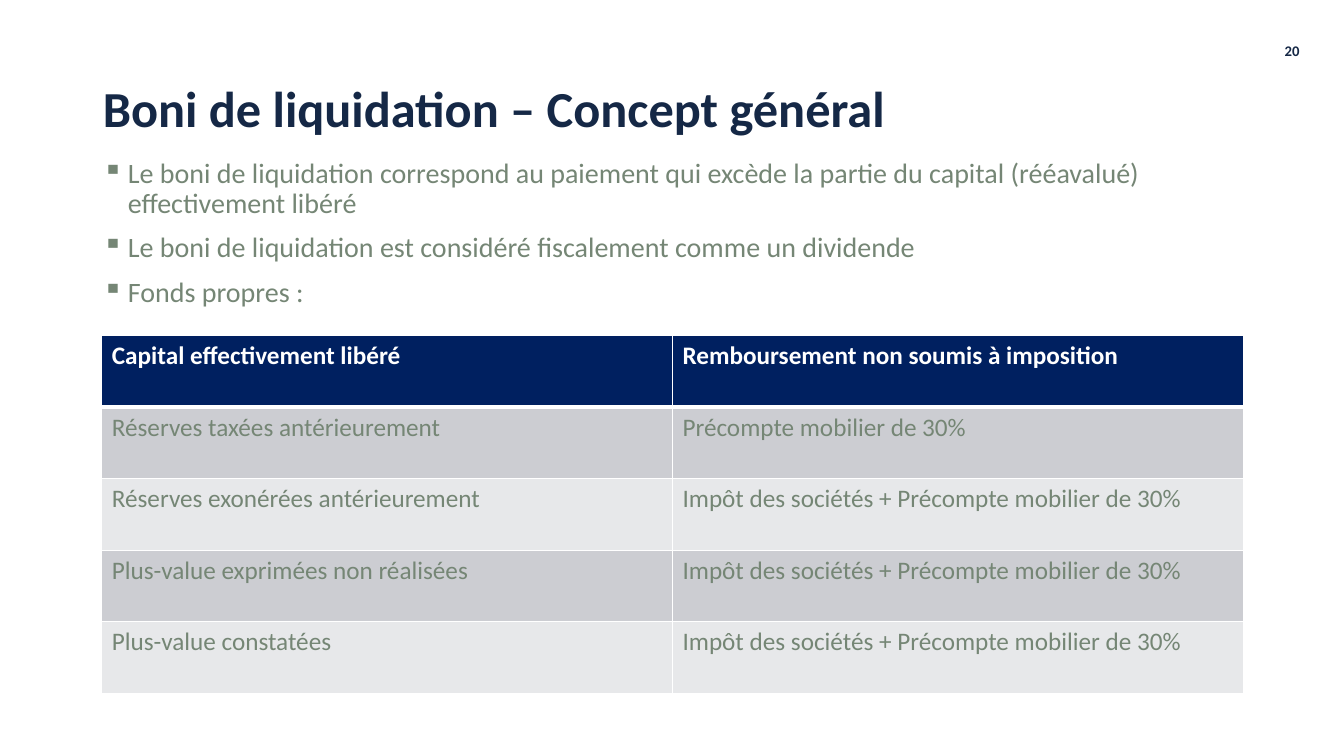
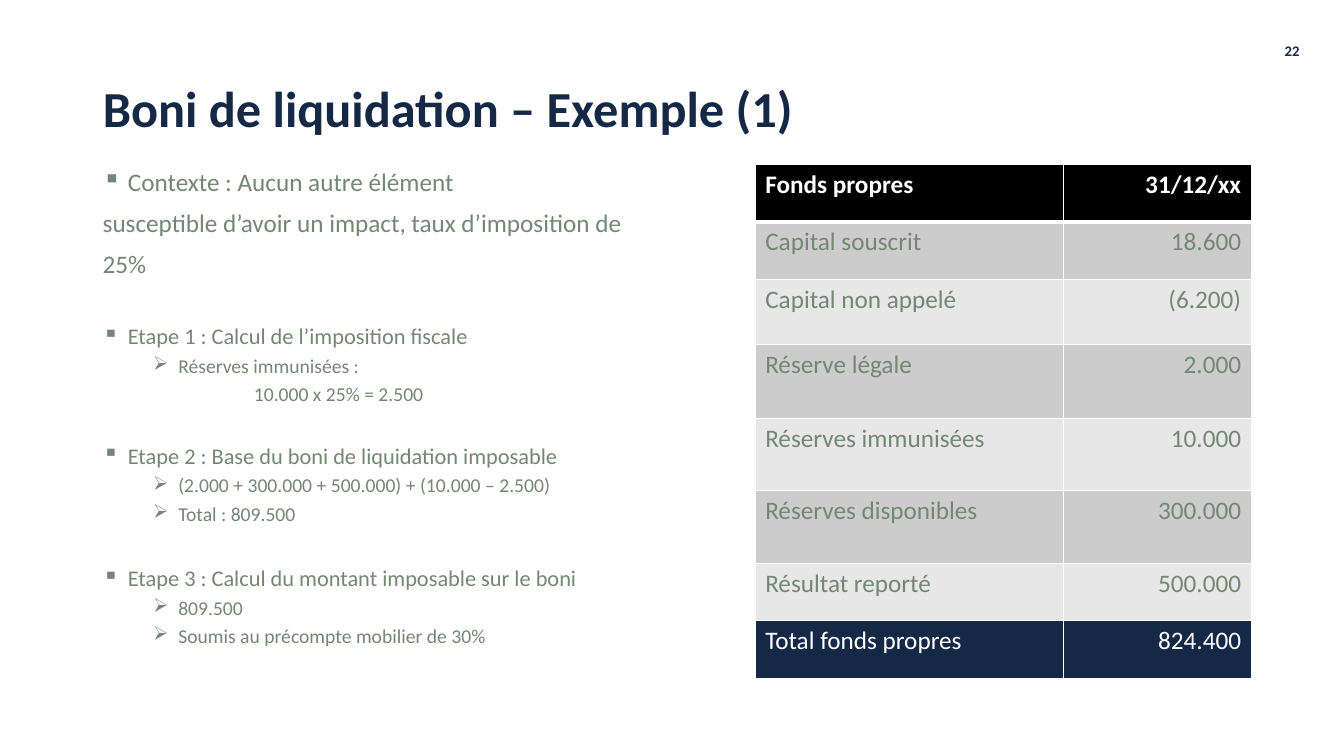
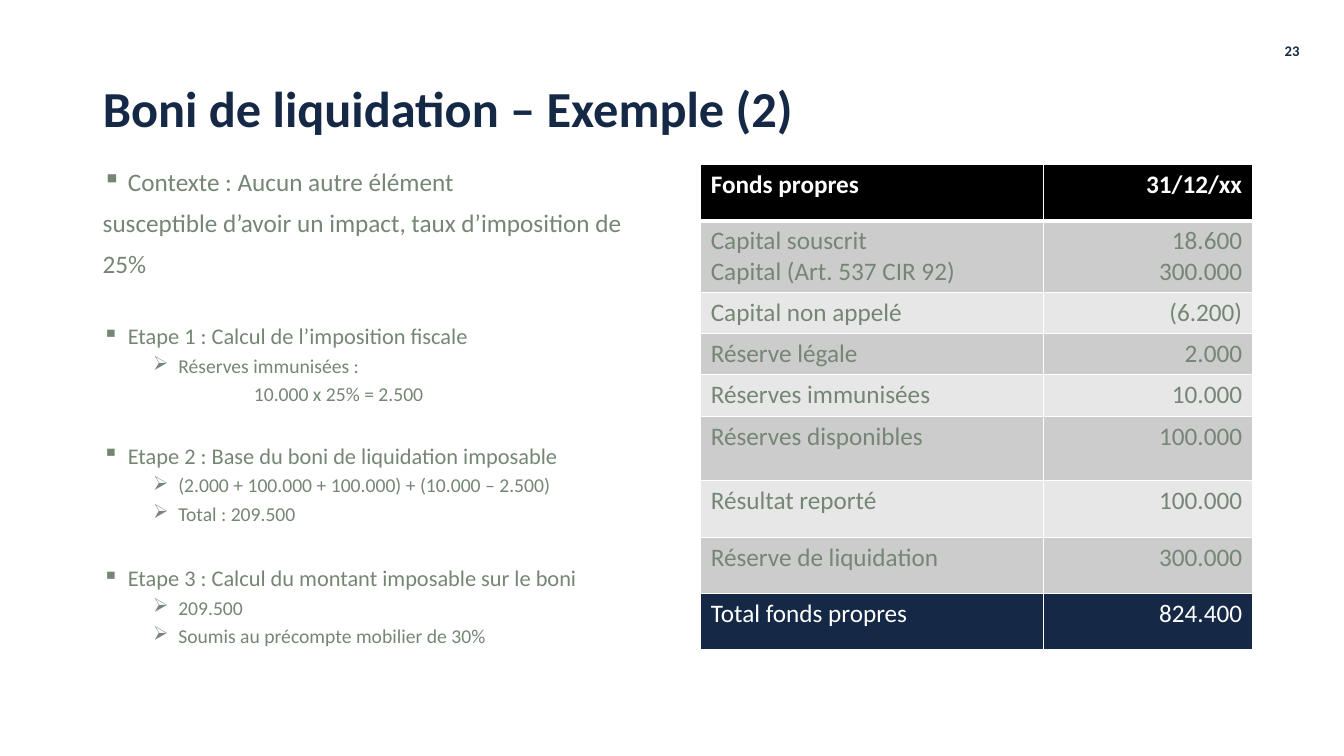
from dataclasses import dataclass
from typing import Optional

import pptx
import pptx.dml.color
import pptx.enum.text
import pptx.oxml.ns
import pptx.util
from lxml import etree

Inches = pptx.util.Inches
Pt = pptx.util.Pt
ALIGN = pptx.enum.text.PP_ALIGN
ANCHOR = pptx.enum.text.MSO_ANCHOR

FONT = "Calibri"
NAVY = "152846"
SAGE = "758675"
WHITE = "FFFFFF"


@dataclass(frozen=True)
class LineStyle:
    size: float
    before: float
    margin: float = 0
    indent: float = 0
    bullet: str = ""
    level: int = 0


@dataclass(frozen=True)
class Line:
    text: str
    style: LineStyle
    before: Optional[float] = None


@dataclass(frozen=True)
class Palette:
    header: str
    bands: tuple[str, str]
    total: Optional[str] = None


@dataclass(frozen=True)
class Grid:
    left: float
    top: float
    columns: tuple[float, float]
    heights: list[float]
    rows: list[tuple[str, str]]
    palette: Palette
    value_align: ALIGN = ALIGN.RIGHT


@dataclass(frozen=True)
class Page:
    number: int
    title: str
    body_box: tuple[float, float, float, float]
    body: list[Line]
    grid: Grid


POINT = LineStyle(20, 10, 0.25, -0.25, "▪")
CONTEXT = LineStyle(18, 10, 0.25, -0.25, "▪")
CONTEXT_REST = LineStyle(18, 10)
STEP = LineStyle(16, 10, 0.25, -0.25, "▪")
DETAIL = LineStyle(14, 5, 0.75, -0.25, "➢", 1)
FORMULA = LineStyle(14, 5, 1.5, 0, "", 1)

CONCEPT_COLOURS = Palette("002060", ("CCCDD2", "E7E8EA"))
EQUITY_COLOURS = Palette("000000", ("CCCCCC", "E7E7E7"), NAVY)


def rgb(value: str) -> pptx.dml.color.RGBColor:
    return pptx.dml.color.RGBColor.from_string(value)


def add_child(parent, tag: str, **attributes: str):
    return etree.SubElement(parent, pptx.oxml.ns.qn(tag), **attributes)


def set_font(paragraph, size: float, colour: str, bold: bool = False) -> None:
    font = paragraph.font
    font.name = FONT
    font.size = Pt(size)
    font.bold = bold
    font.color.rgb = rgb(colour)


def draw_title(slide, text: str) -> None:
    title = slide.shapes.title
    title.left, title.top = Inches(0.92), Inches(0.76)
    title.width, title.height = Inches(11.5), Inches(0.69)
    frame = title.text_frame
    frame.text = text
    frame.word_wrap = True
    frame.vertical_anchor = ANCHOR.MIDDLE
    heading = frame.paragraphs[0]
    heading.alignment = ALIGN.LEFT
    heading.line_spacing = 0.9
    set_font(heading, 36, NAVY, True)


def draw_page_number(slide, number: int) -> None:
    box = slide.shapes.add_textbox(Inches(12.61), Inches(0.37), Inches(0.41), Inches(0.5))
    frame = box.text_frame
    frame.word_wrap = True
    frame.text = str(number)
    frame.paragraphs[0].alignment = ALIGN.CENTER
    set_font(frame.paragraphs[0], 10.5, NAVY, True)


def draw_body(slide, area: tuple[float, float, float, float], lines: list[Line]) -> None:
    frame = slide.shapes.add_textbox(*map(Inches, area)).text_frame
    frame.word_wrap = True
    for index, line in enumerate(lines):
        style = line.style
        paragraph = frame.add_paragraph() if index else frame.paragraphs[0]
        paragraph.text = line.text
        paragraph.level = style.level
        paragraph.line_spacing = 0.9
        if index:
            paragraph.space_before = Pt(style.before if line.before is None else line.before)
        properties = paragraph._p.get_or_add_pPr()
        properties.set("marL", str(Inches(style.margin)))
        properties.set("indent", str(Inches(style.indent)))
        if style.bullet:
            add_child(properties, "a:buChar", char=style.bullet)
        else:
            add_child(properties, "a:buNone")
        set_font(paragraph, style.size, SAGE)


def draw_borders(cell, top: float, bottom: float) -> None:
    properties = cell._tc.get_or_add_tcPr()
    for side, width in (("L", 1), ("R", 1), ("T", top), ("B", bottom)):
        border = add_child(properties, f"a:ln{side}", w=str(Pt(width)))
        add_child(add_child(border, "a:solidFill"), "a:srgbClr", val=WHITE)


def draw_grid(slide, grid: Grid) -> None:
    table = slide.shapes.add_table(
        len(grid.rows), len(grid.columns), Inches(grid.left), Inches(grid.top),
        Inches(sum(grid.columns)), Inches(sum(grid.heights)),
    ).table
    table.horz_banding = False
    for column, width in zip(table.columns, grid.columns):
        column.width = Inches(width)
    for index, (height, texts) in enumerate(zip(grid.heights, grid.rows)):
        table.rows[index].height = Inches(height)
        is_header = index == 0
        is_total = grid.palette.total is not None and index == len(grid.rows) - 1
        if is_header:
            fill = grid.palette.header
        elif is_total:
            fill = grid.palette.total
        else:
            fill = grid.palette.bands[(index - 1) % 2]
        for text, align, cell in zip(texts, (ALIGN.LEFT, grid.value_align), table.rows[index].cells):
            draw_borders(cell, 3 if index == 1 else 1, 3 if is_header else 1)
            cell.fill.solid()
            cell.fill.fore_color.rgb = rgb(fill)
            cell.text = text
            for paragraph in cell.text_frame.paragraphs:
                paragraph.alignment = align
                set_font(paragraph, 18, WHITE if is_header or is_total else SAGE, is_header)


def example_body(base: str, total: str) -> list[Line]:
    return [
        Line("Contexte : Aucun autre élément", CONTEXT),
        Line("susceptible d’avoir un impact, taux d’imposition de", CONTEXT_REST),
        Line("25%", CONTEXT_REST),
        Line("Etape 1 : Calcul de l’imposition fiscale", STEP, 33),
        Line("Réserves immunisées :", DETAIL),
        Line("10.000 x 25% = 2.500", FORMULA),
        Line("Etape 2 : Base du boni de liquidation imposable", STEP, 28),
        Line(f"({base}) + (10.000 – 2.500)", DETAIL),
        Line(f"Total : {total}", DETAIL),
        Line("Etape 3 : Calcul du montant imposable sur le boni", STEP, 30),
        Line(total, DETAIL),
        Line("Soumis au précompte mobilier de 30%", DETAIL),
    ]


def equity_grid(left: float, columns: tuple[float, float], heights: list[float],
                items: list[tuple[str, str]]) -> Grid:
    rows = [("Fonds propres", "31/12/xx"), *items, ("Total fonds propres", "824.400")]
    return Grid(left, 1.63, columns, heights, rows, EQUITY_COLOURS)


EXAMPLE_BOX = (0.92, 1.63, 11.5, 5.11)
TAXED_TWICE = "Impôt des sociétés + Précompte mobilier de 30%"

PAGES = [
    Page(
        20, "Boni de liquidation – Concept général", (0.92, 1.53, 11.86, 5.21),
        [
            Line("Le boni de liquidation correspond au paiement qui excède la partie du capital "
                 "(rééavalué) effectivement libéré", POINT),
            Line("Le boni de liquidation est considéré fiscalement comme un dividende", POINT),
            Line("Fonds propres :", POINT),
        ],
        Grid(
            1.01, 3.33, (5.66, 5.66), [0.71] * 5,
            [
                ("Capital effectivement libéré", "Remboursement non soumis à imposition"),
                ("Réserves taxées antérieurement", "Précompte mobilier de 30%"),
                ("Réserves exonérées antérieurement", TAXED_TWICE),
                ("Plus-value exprimées non réalisées", TAXED_TWICE),
                ("Plus-value constatées", TAXED_TWICE),
            ],
            CONCEPT_COLOURS, ALIGN.LEFT,
        ),
    ),
    Page(
        22, "Boni de liquidation – Exemple (1)", EXAMPLE_BOX,
        example_body("2.000 + 300.000 + 500.000", "809.500"),
        equity_grid(
            7.49, (3.06, 1.86), [0.57, 0.57, 0.65, 0.73, 0.72, 0.72, 0.57, 0.57],
            [
                ("Capital souscrit", "18.600"),
                ("Capital non appelé", "(6.200)"),
                ("Réserve légale", "2.000"),
                ("Réserves immunisées", "10.000"),
                ("Réserves disponibles", "300.000"),
                ("Résultat reporté", "500.000"),
            ],
        ),
    ),
    Page(
        23, "Boni de liquidation – Exemple (2)", EXAMPLE_BOX,
        example_body("2.000 + 100.000 + 100.000", "209.500"),
        equity_grid(
            6.95, (3.4, 2.07), [0.56, 0.71, 0.41, 0.41, 0.41, 0.64, 0.56, 0.56, 0.56],
            [
                ("Capital souscrit\nCapital (Art. 537 CIR 92)", "18.600\n300.000"),
                ("Capital non appelé", "(6.200)"),
                ("Réserve légale", "2.000"),
                ("Réserves immunisées", "10.000"),
                ("Réserves disponibles", "100.000"),
                ("Résultat reporté", "100.000"),
                ("Réserve de liquidation", "300.000"),
            ],
        ),
    ),
]


def main() -> None:
    deck = pptx.Presentation()
    deck.slide_width, deck.slide_height = Inches(13.33), Inches(7.5)
    title_only = deck.slide_layouts[5]
    for page in PAGES:
        slide = deck.slides.add_slide(title_only)
        draw_title(slide, page.title)
        draw_page_number(slide, page.number)
        draw_body(slide, page.body_box, page.body)
        draw_grid(slide, page.grid)
    deck.save("out.pptx")


if __name__ == "__main__":
    main()
